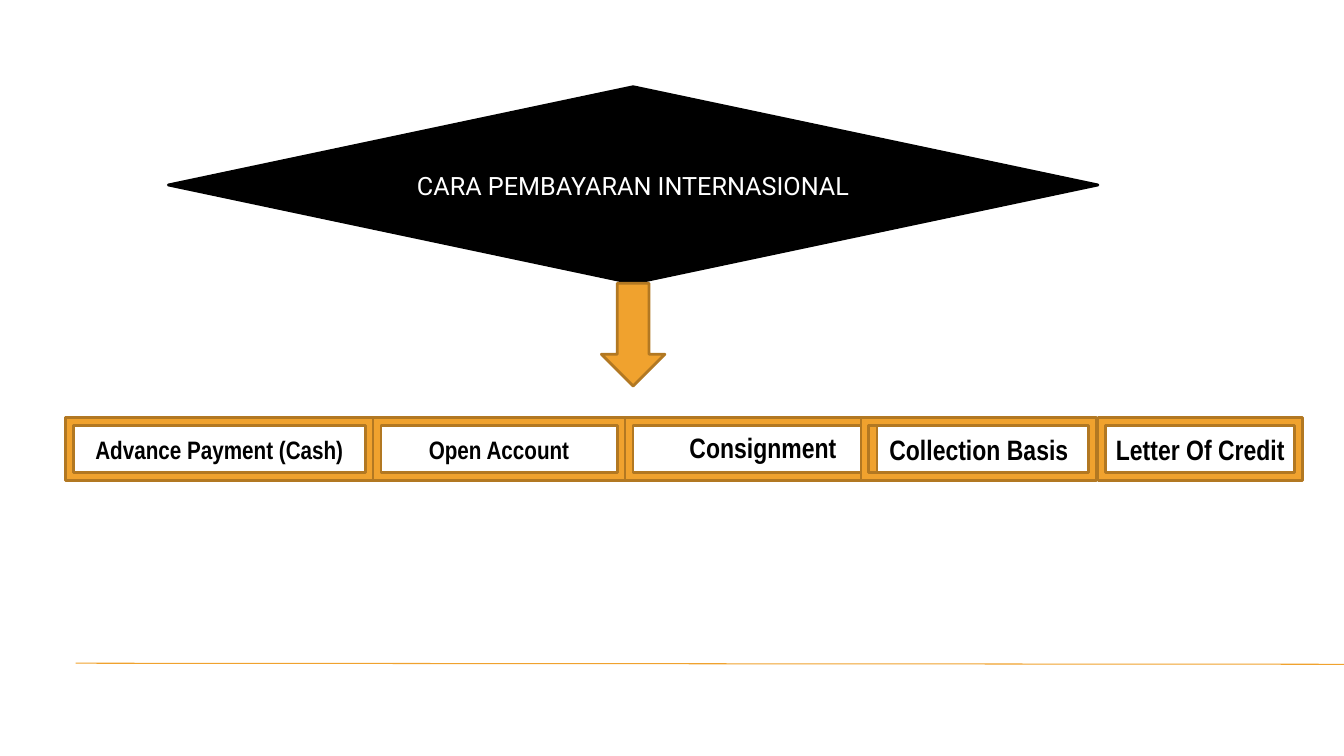
from lxml.etree import SubElement
from pptx import Presentation
from pptx.dml.color import RGBColor
from pptx.enum.shapes import MSO_CONNECTOR, MSO_SHAPE
from pptx.enum.text import MSO_ANCHOR, MSO_AUTO_SIZE, PP_ALIGN
from pptx.oxml.ns import qn
from pptx.util import Inches, Pt

WIDE, HIGH = Inches(13.33), Inches(7.5)
GOLD, BROWN, BLACK, WHITE = "F0A22E", "B27822", "000000", "FFFFFF"
MID = 47.11  # axis shared by the diamond and the arrow
TOP, TALL = 55.2, 8.4  # row of frames

# label, text size, width, step to the next frame
FRAMES = [
    ("Advance Payment (Cash)", 18, 22.88, 22.88),
    ("Open Account", 18, 18.75, 18.75),
    ("", 20, 18.75, 17.55),
    ("Collection Basis", 20, 17.55, 17.63),
    ("Letter Of Credit", 20, 15.23, 15.23),
]


def place(left, top, width, height):
    """Turn percentages of the slide into lengths."""
    return [int(side * share / 100) for side, share in
            zip((WIDE, HIGH, WIDE, HIGH), (left, top, width, height))]


def paint(target, color):
    target.solid()
    target.fore_color.rgb = RGBColor.from_string(color)


def write(frame, text, size, font, color, bold=False, align=PP_ALIGN.CENTER):
    para = frame.paragraphs[0]
    para.alignment = align
    run = para.add_run()
    run.text = text
    run.font.size = Pt(size)
    run.font.name = font
    run.font.bold = bold
    paint(run.font.fill, color)


def add_box(slide, kind, box, fill, edge):
    shape = slide.shapes.add_shape(kind, *place(*box))
    shape.shadow.inherit = False
    paint(shape.fill, fill)
    paint(shape.line.fill, edge)
    shape.line.width = Pt(2)
    frame = shape.text_frame
    frame.vertical_anchor = MSO_ANCHOR.MIDDLE
    frame.margin_left = frame.margin_right = Inches(0.05)
    return shape


def add_rule(slide):
    left, top, right, end = place(5.63, 87.73, 100, 87.87)
    rule = slide.shapes.add_connector(MSO_CONNECTOR.STRAIGHT, left, top, right, end)
    paint(rule.line.fill, GOLD)
    rule.line.width = Pt(0.75)
    SubElement(rule.element.spPr, qn("a:effectLst"))


def add_frames(slide):
    left = 4.88
    for label, size, width, step in FRAMES:
        shape = add_box(slide, MSO_SHAPE.FRAME, (left, TOP, width, TALL), GOLD, BROWN)
        if label:
            write(shape.text_frame, label, size, "Arial Narrow", BLACK, True)
        else:
            add_label(slide, "Consignment", size)
        left += step


def add_label(slide, text, size):
    frame = slide.shapes.add_textbox(*place(50.56, 56.27, 13.5, 5.87)).text_frame
    frame.word_wrap = True
    frame.auto_size = MSO_AUTO_SIZE.SHAPE_TO_FIT_TEXT
    write(frame, text, size, "Arial Narrow", BLACK, True, PP_ALIGN.LEFT)


def main():
    deck = Presentation()
    deck.slide_width, deck.slide_height = WIDE, HIGH
    slide = deck.slides.add_slide(deck.slide_layouts[6])
    paint(slide.background.fill, WHITE)
    add_rule(slide)
    topic = add_box(slide, MSO_SHAPE.FLOWCHART_DECISION,
                    (MID - 69.17 / 2, 11.47, 69.17, 26), BLACK, BLACK)
    write(topic.text_frame, "CARA PEMBAYARAN INTERNASIONAL", 18, "Roboto", WHITE)
    add_frames(slide)
    add_box(slide, MSO_SHAPE.DOWN_ARROW, (MID - 4.73 / 2, 37.47, 4.73, 13.6), GOLD, BROWN)
    deck.save("out.pptx")


if __name__ == "__main__":
    main()
